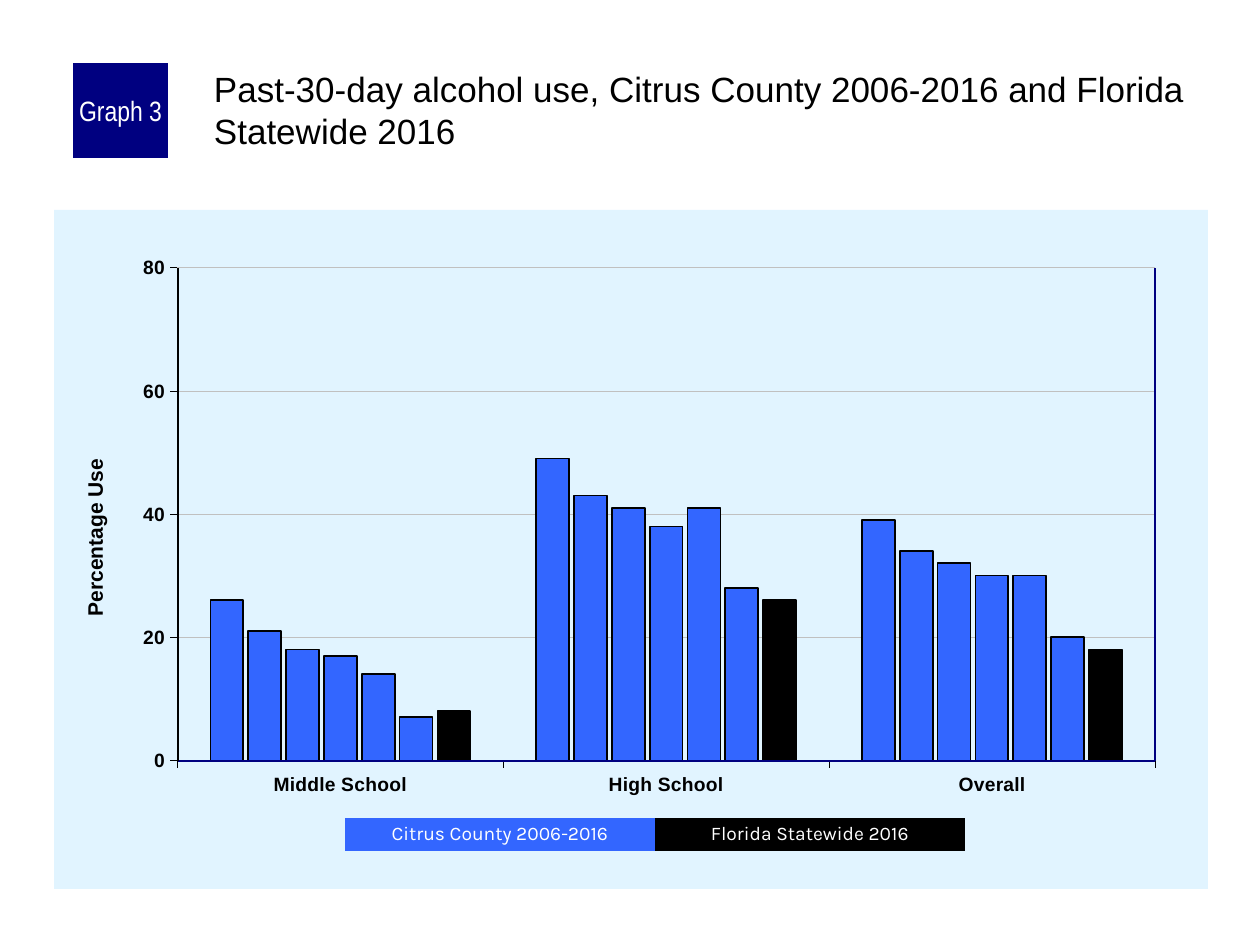
"""Build the slide charting past-30-day alcohol use in Citrus County and Florida."""
from lxml.etree import SubElement
from pptx import Presentation
from pptx.chart.data import CategoryChartData
from pptx.dml.color import RGBColor
from pptx.enum.chart import XL_CHART_TYPE, XL_TICK_MARK
from pptx.enum.shapes import MSO_CONNECTOR, MSO_SHAPE
from pptx.enum.text import MSO_ANCHOR, PP_ALIGN
from pptx.oxml import parse_xml
from pptx.oxml.ns import nsdecls, qn
from pptx.util import Pt

PX = 914400 // 126
COLORS = {"county": "3366FF", "state": "000000", "navy": "000080", "black": "000000",
          "white": "FFFFFF", "panel": "E1F4FF", "grid": "C0C0C0"}

TITLE = "Past-30-day alcohol use, Citrus County 2006-2016 and Florida Statewide 2016"
TITLE_BOX = (210, 63, 998, 105)
BADGE = "Graph 3"
BADGE_BOX = (73, 63, 95, 95)
CHART_BOX = (54, 210, 1154, 679)
PLOT_BOX = (178, 268, 977, 493)
AXIS_TITLE = "Percentage Use"
AXIS_TITLE_AT = (78, 455)
CATEGORIES = ["Middle School", "High School", "Overall"]
SERIES = [
    ("Series 1", (26, 49, 39), "county"),
    ("Series 2", (21, 43, 34), "county"),
    ("Series 3", (18, 41, 32), "county"),
    ("Series 4", (17, 38, 30), "county"),
    ("Series 5", (14, 41, 30), "county"),
    ("Series 6", (7, 28, 20), "county"),
    ("Series 7", (8, 26, 18), "state"),
]
LEGEND = [("Citrus County 2006-2016", "county"), ("Florida Statewide 2016", "state")]
LEGEND_BOX = (345, 818, 310, 33)


def emu(lengths):
    return [length * PX for length in lengths]


def color(name):
    return RGBColor.from_string(COLORS[name])


def set_font(font, size, name="Arial", fill="black", bold=False):
    font.size, font.name, font.bold = Pt(size), name, bold
    font.color.rgb = color(fill)


def set_line(line, name, width):
    line.color.rgb = color(name)
    line.width = Pt(width)


def add_block(slide, box, text, fill, size, font_name):
    shape = slide.shapes.add_shape(MSO_SHAPE.RECTANGLE, *emu(box))
    shape.shadow.inherit = False
    shape.fill.solid()
    shape.fill.fore_color.rgb = color(fill)
    shape.line.fill.background()
    frame = shape.text_frame
    frame.word_wrap = True
    frame.vertical_anchor = MSO_ANCHOR.MIDDLE
    paragraph = frame.paragraphs[0]
    paragraph.text = text
    paragraph.alignment = PP_ALIGN.CENTER
    set_font(paragraph.font, size, font_name, "white")
    return shape


def add_title(slide):
    frame = slide.shapes.add_textbox(*emu(TITLE_BOX)).text_frame
    frame.word_wrap = True
    frame.margin_left = frame.margin_top = 4 * PX
    frame.margin_right = frame.margin_bottom = 0
    paragraph = frame.paragraphs[0]
    paragraph.text = TITLE
    set_font(paragraph.font, 20)


def manual_layout(position, size=(), inner=False):
    left, top, width, height = CHART_BOX
    values = [("x", (position[0] - left) / width), ("y", (position[1] - top) / height)]
    if size:
        values += [("w", size[0] / width), ("h", size[1] / height)]
    layout = parse_xml(f"<c:layout {nsdecls('c')}><c:manualLayout/></c:layout>")
    manual = layout[0]
    if inner:
        SubElement(manual, qn("c:layoutTarget")).set("val", "inner")
    for key in ("x", "y"):
        SubElement(manual, qn(f"c:{key}Mode")).set("val", "edge")
    for key, value in values:
        SubElement(manual, qn(f"c:{key}")).set("val", f"{value:.3f}")
    return layout


def replace_layout(parent, layout, index):
    for old in parent.findall(qn("c:layout")):
        parent.remove(old)
    parent.insert(index, layout)


def style_axes(chart):
    for axis in (chart.category_axis, chart.value_axis):
        axis.major_tick_mark = XL_TICK_MARK.OUTSIDE
        axis.minor_tick_mark = XL_TICK_MARK.NONE
        set_font(axis.tick_labels.font, 11, bold=True)
        set_line(axis.format.line, "black", 0.25)
    axis = chart.value_axis
    axis.minimum_scale, axis.maximum_scale, axis.major_unit = 0, 80, 20
    set_line(axis.major_gridlines.format.line, "grid", 0.25)
    frame = axis.axis_title.text_frame
    frame.text = AXIS_TITLE
    set_font(frame.paragraphs[0].runs[0].font, 12, bold=True)
    title = axis.axis_title._element
    body = title.find(".//" + qn("a:bodyPr"))
    body.set("rot", "-5400000")
    body.set("vert", "horz")
    replace_layout(title, manual_layout(AXIS_TITLE_AT), 1)


def add_use_chart(slide):
    data = CategoryChartData()
    data.categories = CATEGORIES
    for name, values, _ in SERIES:
        data.add_series(name, values)
    chart = slide.shapes.add_chart(
        XL_CHART_TYPE.COLUMN_CLUSTERED, *emu(CHART_BOX), data).chart
    chart.has_legend = chart.has_title = False
    set_font(chart.font, 8)
    plot = chart.plots[0]
    plot.gap_width, plot.overlap, plot.vary_by_categories = 200, -15, False
    for series, (_, _, fill) in zip(plot.series, SERIES):
        series.format.fill.solid()
        series.format.fill.fore_color.rgb = color(fill)
        set_line(series.format.line, "black", 1)
    style_axes(chart)
    chart_space = chart._chartSpace
    plot_area = chart_space.find(".//" + qn("c:plotArea"))
    replace_layout(plot_area, manual_layout(PLOT_BOX[:2], PLOT_BOX[2:], inner=True), 0)
    panel = parse_xml(
        f'<c:spPr {nsdecls("c", "a")}><a:solidFill><a:srgbClr val="{COLORS["panel"]}"/>'
        "</a:solidFill><a:ln><a:noFill/></a:ln></c:spPr>")
    chart_space.find(qn("c:chart")).addnext(panel)


def add_plot_edges(slide):
    left, top, width, height = PLOT_BOX
    right, bottom = left + width, top + height
    edges = [((left, bottom, right, bottom), "navy"),
             ((right, top, right, bottom), "navy"),
             ((left, top, left, bottom), "black")]
    for ends, name in edges:
        edge = slide.shapes.add_connector(MSO_CONNECTOR.STRAIGHT, *emu(ends))
        set_line(edge.line, name, 1)
        SubElement(edge._element.spPr, qn("a:effectLst"))


def main():
    presentation = Presentation()
    presentation.slide_width, presentation.slide_height = emu((1260, 945))
    slide = presentation.slides.add_slide(presentation.slide_layouts[6])
    add_use_chart(slide)
    add_plot_edges(slide)
    badge = add_block(slide, BADGE_BOX, BADGE, "navy", 16, "Arial Narrow").text_frame
    badge.margin_left = badge.margin_right = 6 * PX
    badge.margin_top = badge.margin_bottom = 0
    add_title(slide)
    left, top, width, height = LEGEND_BOX
    for index, (label, fill) in enumerate(LEGEND):
        box = (left + index * width, top, width, height)
        block = add_block(slide, box, label, fill, 11, "Karla")
        block.text_frame.paragraphs[0].line_spacing = 0.9
    presentation.save("out.pptx")


if __name__ == "__main__":
    main()
